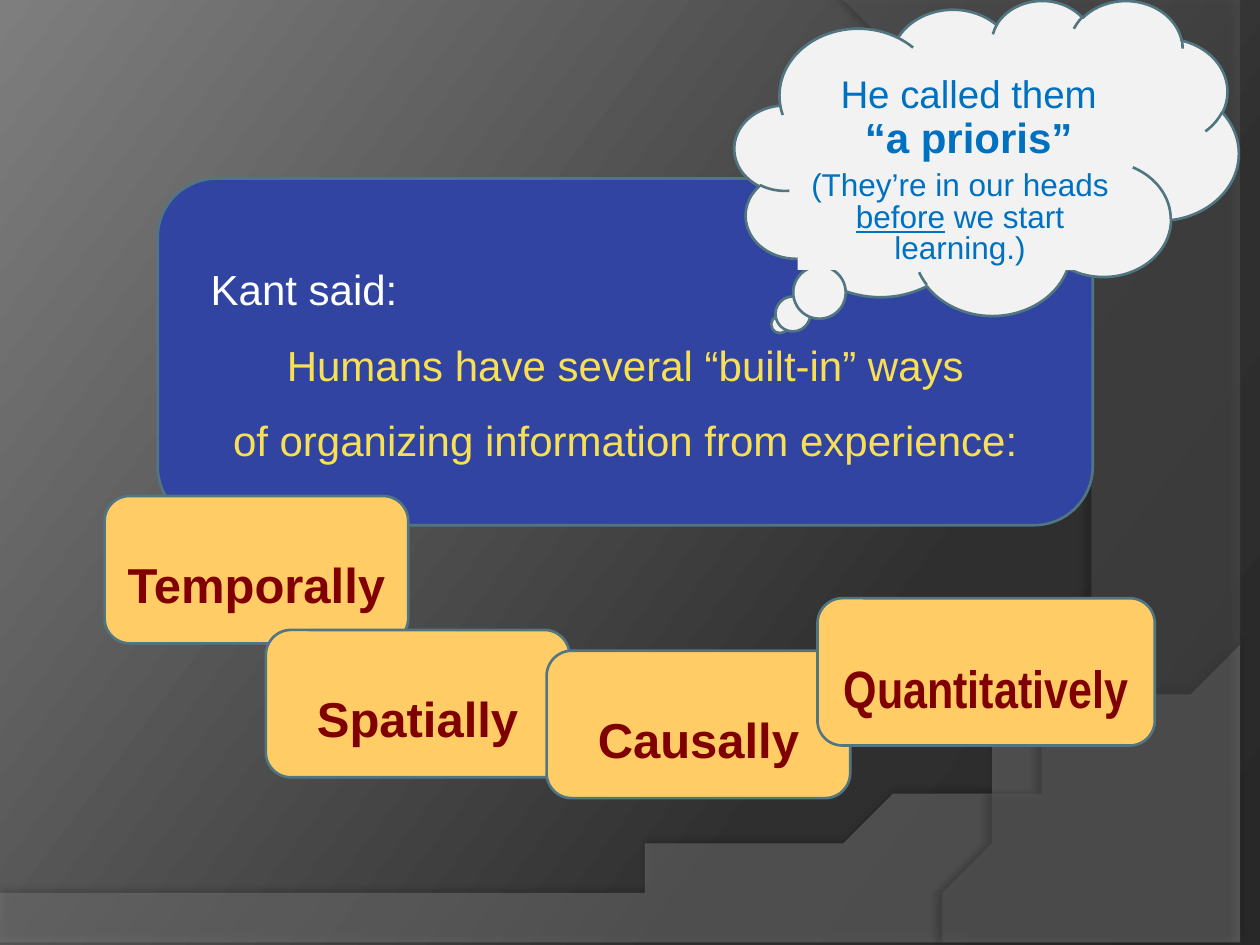
from copy import deepcopy

from lxml.etree import SubElement
from pptx import Presentation
from pptx.dml.color import RGBColor
from pptx.enum.shapes import MSO_SHAPE
from pptx.enum.text import MSO_ANCHOR, PP_ALIGN
from pptx.oxml.ns import qn
from pptx.util import Cm, Pt

COLORS = {
    "outline": "517682", "panel": "3144A1", "card": "FFCC66", "cloud": "F2F2F2",
    "white": "FFFFFF", "yellow": "F7DF56", "maroon": "800000", "blue": "0070C0",
    "wave": "7F7F7F", "arc": "5E5E5E", "shadow": "000000",
}
BACKGROUND_STOPS = [(0, "282828"), (0.3, "2F2F2F"), (1, "7E7E7E")]
CURVE_STEPS = 60


def add_box(preset, left, top, width, height, fill, adjustments=(), outlined=True):
    box = page.shapes.add_shape(preset, Cm(left), Cm(top), Cm(width), Cm(height))
    box.shadow.inherit = False
    for index, value in enumerate(adjustments):
        box.adjustments[index] = value
    box.fill.solid()
    box.fill.fore_color.rgb = RGBColor.from_string(COLORS[fill])
    if outlined:
        box.line.color.rgb = RGBColor.from_string(COLORS["outline"])
        box.line.width = Pt(1.5)
    else:
        box.line.fill.background()
    box.text_frame.word_wrap = True
    box.text_frame.vertical_anchor = MSO_ANCHOR.MIDDLE
    return box


def write(box, text, *, size, color, font="Arial", bold=False, underline=False,
          align=PP_ALIGN.CENTER, spacing=1.5, same_line=False):
    """Add text as a new paragraph, or to the last one if same_line is set."""
    frame = box.text_frame
    para = frame.paragraphs[-1]
    if para.runs and not same_line:
        para = frame.add_paragraph()
    para.alignment = align
    para.line_spacing = spacing
    span = para.add_run()
    span.text = text
    span.font.name = font
    span.font.size = Pt(size)
    span.font.bold = bold
    span.font.underline = underline
    span.font.color.rgb = RGBColor.from_string(COLORS[color])
    return para


deck = Presentation()
deck.slide_width, deck.slide_height = Cm(25.4), Cm(19.05)
page = deck.slides.add_slide(deck.slide_layouts[6])

# Background gradient with a third stop
backdrop = page.background.fill
backdrop.gradient()
backdrop.gradient_angle = 143
stop_list = page.element.find(".//" + qn("a:gsLst"))
stop_list.insert(1, deepcopy(stop_list[0]))
for stop, (position, color) in zip(backdrop.gradient_stops, BACKGROUND_STOPS):
    stop.position = position
    stop.color.rgb = RGBColor.from_string(color)

# Sweeping translucent forms: three corners, then a Bezier curve from the last corner
sweeps = [
    ("wave", 45, [(0, 17.91), (0, 19.05), (25.4, 19.05), (25.4, 13.21)],
     [(14.2, 18.52), (9.93, 18.26), (0, 17.91)], 35, 3.5, 270),
    ("arc", 40, [(25.4, 0.05), (25.4, 19.05), (17.86, 19.05)],
     [(22.63, 15.72), (24.05, 6.99), (16.97, 0)], 45, 4, 180),
]
for color, opacity, corners, controls, shadow_opacity, distance, angle in sweeps:
    curve_points = [corners[-1], *controls]
    points = list(corners)
    for step in range(1, CURVE_STEPS + 1):
        t = step / CURVE_STEPS
        weights = ((1 - t) ** 3, 3 * t * (1 - t) ** 2, 3 * t * t * (1 - t), t ** 3)
        points.append(tuple(sum(weight * point[axis] for weight, point in zip(weights, curve_points))
                            for axis in (0, 1)))
    builder = page.shapes.build_freeform(*points[0], scale=Cm(1))
    builder.add_line_segments(points[1:], close=True)
    sweep = builder.convert_to_shape()
    sweep.line.fill.background()
    sweep.fill.solid()
    sweep.fill.fore_color.rgb = RGBColor.from_string(COLORS[color])
    properties = sweep.element.spPr
    fill_color = properties.find(qn("a:solidFill"))[0]
    SubElement(fill_color, qn("a:alpha"), val=str(opacity * 1000))
    sweep.shadow.inherit = False
    shadow = SubElement(properties.find(qn("a:effectLst")), qn("a:outerShdw"),
                        blurRad=str(Pt(4)), dist=str(Pt(distance)),
                        dir=str(angle * 60000), algn="ctr", rotWithShape="0")
    shadow_color = SubElement(shadow, qn("a:srgbClr"), val=COLORS["shadow"])
    SubElement(shadow_color, qn("a:alpha"), val=str(shadow_opacity * 1000))

# Kant's statement
callout = MSO_SHAPE.ROUNDED_RECTANGULAR_CALLOUT
callout_shape = (-0.19, 0.5, 0.17)
panel = add_box(callout, 3.18, 3.6, 18.85, 6.99, "panel", callout_shape)
opening = write(panel, "Kant said:", size=24, color="white", align=PP_ALIGN.LEFT)
opening._p.get_or_add_pPr().set("marL", str(Cm(0.47)))
for line in ("Humans have several “built-in” ways",
             "of organizing information from experience:"):
    write(panel, line, size=24, color="yellow")

# The four ways
ways = [
    ("Temporally", 2.11, 10, 6.12, 28, "Arial"),
    ("Spatially", 5.36, 12.7, 6.12, 28, "Arial"),
    ("Causally", 11.02, 13.12, 6.12, 28, "Arial"),
    ("Quantitatively", 16.48, 12.06, 6.8, 30, "Arial Narrow"),
]
for way, left, top, width, size, font in ways:
    card = add_box(callout, left, top, width, 2.97, "card", callout_shape)
    write(card, way, size=size, color="maroon", font=font, bold=True)

# Thought cloud and its remark
cloud = add_box(MSO_SHAPE.CLOUD_CALLOUT, 14.81, 0, 10.16, 6.35, "cloud", (-0.41, 0.53))
cloud.text_frame.margin_bottom = Cm(1.5)
write(cloud, "He called them", size=22, color="blue", spacing=Pt(26))
write(cloud, "“a prioris”", size=24, color="blue", bold=True, spacing=Pt(26))

remark = add_box(MSO_SHAPE.RECTANGLE, 16.08, 3.38, 6.55, 2.06, "cloud", outlined=False)
remark_style = {"size": 18, "color": "blue", "spacing": Pt(18)}
write(remark, "(They’re in our heads", **remark_style)
write(remark, "before", underline=True, **remark_style)
write(remark, " we start learning.)", same_line=True, **remark_style)

deck.save("out.pptx")
